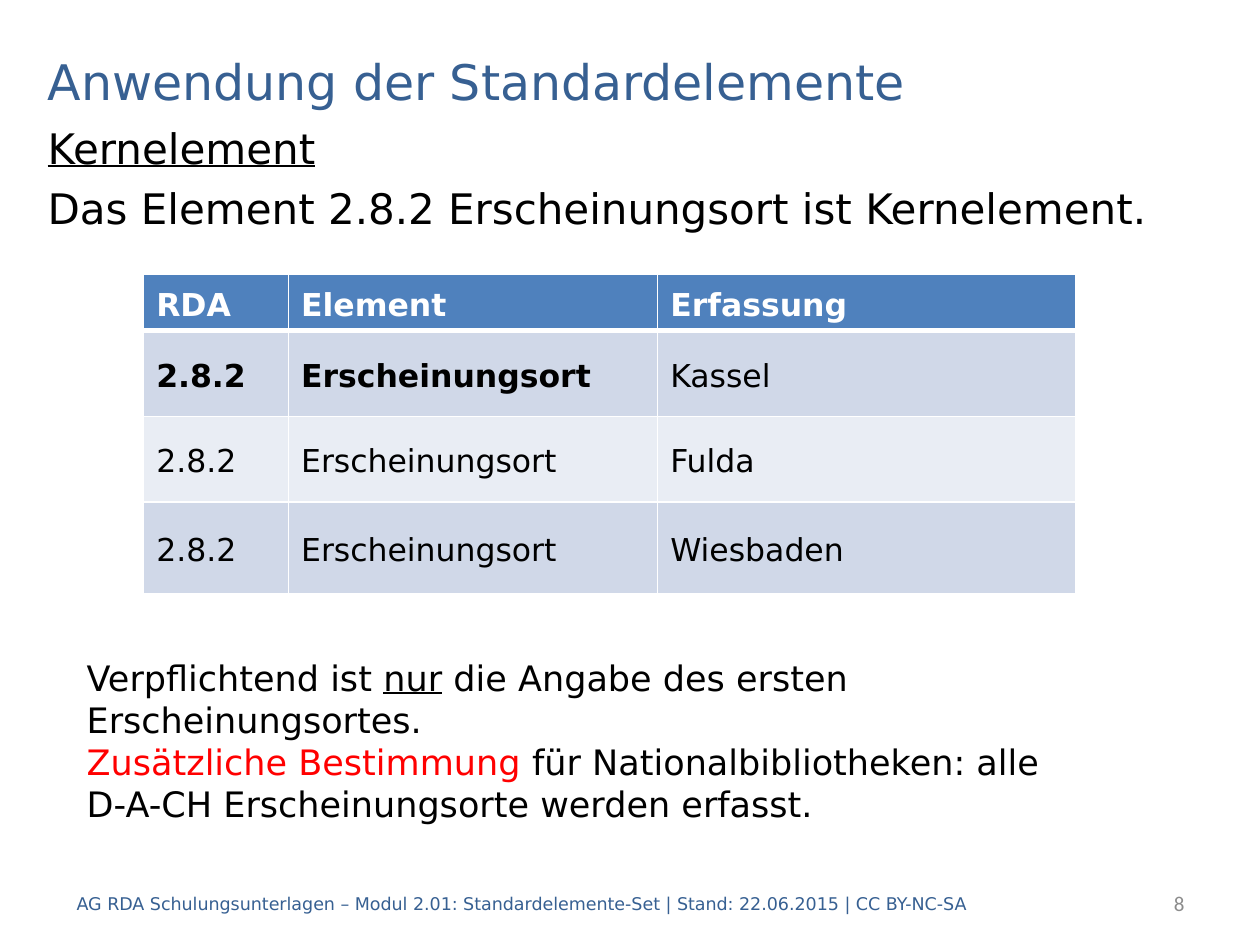
import pptx
import pptx.dml.color
import pptx.enum.text
import pptx.oxml
import pptx.oxml.ns
import pptx.util

Inches = pptx.util.Inches
Pt = pptx.util.Pt
ALIGN = pptx.enum.text.PP_ALIGN
ANCHOR = pptx.enum.text.MSO_ANCHOR

FONT = "DejaVu Sans"
BLACK, WHITE, RED = "000000", "FFFFFF", "FF0000"
NAVY, GREY, HEADER_BLUE = "376092", "8C8C8C", "4F81BD"
BANDS = ["D0D8E8", "E9EDF4"]


def color(hex_string):
    return pptx.dml.color.RGBColor.from_string(hex_string)


def add_run(paragraph, text, size, hex_color=BLACK, bold=False, underline=False, name=FONT):
    run = paragraph.add_run()
    run.text = text
    run.font.name = name
    run.font.size = Pt(size)
    run.font.bold = bold
    run.font.underline = underline
    run.font.color.rgb = color(hex_color)


def add_text_frame(slide, box, anchor=ANCHOR.TOP):
    shape = slide.shapes.add_textbox(*map(Inches, box))
    frame = shape.text_frame
    frame.word_wrap = True
    frame.vertical_anchor = anchor
    return frame


def add_paragraphs(frame, count):
    return [frame.paragraphs[0]] + [frame.add_paragraph() for _ in range(count - 1)]


def add_line(slide, box, text, size, hex_color, name=FONT, align=ALIGN.LEFT):
    """Add a single vertically centred line of text."""
    paragraph = add_text_frame(slide, box, ANCHOR.MIDDLE).paragraphs[0]
    paragraph.alignment = align
    add_run(paragraph, text, size, hex_color, name=name)


def add_introduction(slide, box):
    heading, statement = add_paragraphs(add_text_frame(slide, box), 2)
    for paragraph in (heading, statement):
        paragraph.space_before = Pt(5.6)
    add_run(heading, "Kernelement", 24, underline=True)
    add_run(statement, "Das Element 2.8.2 Erscheinungsort ist Kernelement.", 24)


def add_rule_note(slide, box):
    frame = add_text_frame(slide, box)
    frame.margin_top = Inches(0.44)
    duty, addition, scope = add_paragraphs(frame, 3)
    add_run(duty, "Verpflichtend ist ", 20)
    add_run(duty, "nur", 20, underline=True)
    add_run(duty, " die Angabe des ersten Erscheinungsortes.", 20)
    add_run(addition, "Zusätzliche Bestimmung ", 20, RED)
    add_run(addition, "für Nationalbibliotheken: alle", 20)
    add_run(scope, "D-A-CH Erscheinungsorte werden erfasst.", 20)


def set_borders(cell, bottom_width, top_width):
    properties = cell._tc.get_or_add_tcPr()
    widths = {"lnL": 1, "lnR": 1, "lnT": top_width, "lnB": bottom_width}
    for index, (tag, width) in enumerate(widths.items()):
        border = pptx.oxml.parse_xml(
            f'<a:{tag} {pptx.oxml.ns.nsdecls("a")} w="{Pt(width)}">'
            f'<a:solidFill><a:srgbClr val="{WHITE}"/></a:solidFill></a:{tag}>'
        )
        properties.insert(index, border)


def add_element_table(slide, box):
    rows = [
        ("RDA", "Element", "Erfassung"),
        ("2.8.2", "Erscheinungsort", "Kassel"),
        ("2.8.2", "Erscheinungsort", "Fulda"),
        ("2.8.2", "Erscheinungsort", "Wiesbaden"),
    ]
    table = slide.shapes.add_table(len(rows), 3, *map(Inches, box)).table
    for column, width in zip(table.columns, (1.15, 2.93, 3.32)):
        column.width = Inches(width)
    for row, height in zip(table.rows, (0.39, 0.68, 0.68, 0.73)):
        row.height = Inches(height)

    for row_index, texts in enumerate(rows):
        is_header = row_index == 0
        for column_index, text in enumerate(texts):
            cell = table.cell(row_index, column_index)
            cell.vertical_anchor = ANCHOR.MIDDLE
            cell.fill.solid()
            fill = HEADER_BLUE if is_header else BANDS[(row_index - 1) % 2]
            cell.fill.fore_color.rgb = color(fill)
            set_borders(cell, 3 if is_header else 1, 3 if row_index == 1 else 1)
            paragraph = cell.text_frame.paragraphs[0]
            paragraph.line_spacing = 1.15
            paragraph.space_after = Pt(10)
            bold = is_header or (row_index == 1 and column_index < 2)
            add_run(paragraph, text, 18, WHITE if is_header else BLACK, bold)


def main():
    presentation = pptx.Presentation()
    presentation.slide_width = Inches(10)
    presentation.slide_height = Inches(7.5)
    slide = presentation.slides.add_slide(presentation.slide_layouts[6])

    add_line(slide, (0.28, 0.36, 9.45, 0.56), "Anwendung der Standardelemente", 28, NAVY)
    add_introduction(slide, (0.28, 0.92, 9.45, 5.98))
    add_line(slide, (7.91, 6.97, 1.59, 0.4), "8", 12, GREY, "Calibri", ALIGN.RIGHT)
    add_rule_note(slide, (0.59, 4.77, 8.5, 1.85))
    add_line(
        slide,
        (0.51, 6.97, 8.5, 0.4),
        "AG RDA Schulungsunterlagen – Modul 2.01: Standardelemente-Set"
        " | Stand: 22.06.2015 | CC BY-NC-SA",
        10,
        NAVY,
    )
    add_element_table(slide, (1.14, 2.18, 7.4, 2.48))
    presentation.save("out.pptx")


if __name__ == "__main__":
    main()
